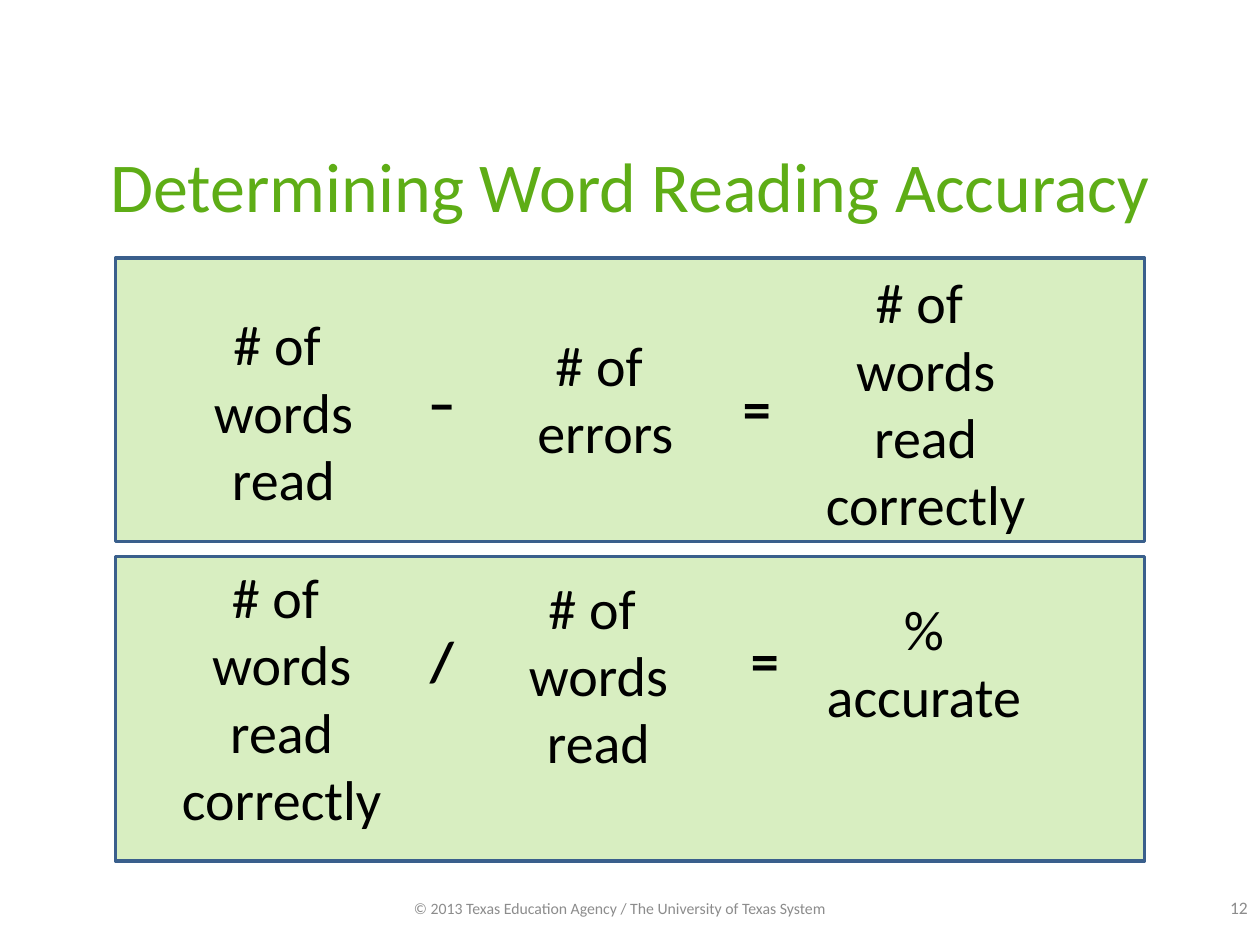
import pptx
import pptx.dml.color
import pptx.enum.shapes
import pptx.enum.text
import pptx.util
from lxml import etree
from pptx.oxml.ns import qn

Pt = pptx.util.Pt
COLORS = {"title": "5EAD16", "band": "92D050", "edge": "3A5F8C", "text": "000000", "footer": "8C8C8C"}
FONT = "Calibri"
TERM_SIZE = 32
LINE_HEIGHT = 39

SUBTRACTION = [
    (["# of ", "words", "read"], 42, 26, 108, False),
    (["–"], 155.5, 59, 62, True),
    (["# of ", "errors"], 222, 38, 116, False),
    (["="], 335.5, 62.5, 62, True),
    (["# of ", "words", "read", "correctly"], 378, 2, 170, False),
]
DIVISION = [
    (["# of ", "words", "read", "correctly"], 10, 0, 170, False),
    (["/"], 155.5, 36, 62, True),
    (["# of ", "words", "read"], 222, 6, 108, False),
    (["="], 340, 36, 62, True),
    (["%", "accurate"], 385, 18, 154, False),
]


def color(name):
    """Return a named colour."""
    return pptx.dml.color.RGBColor.from_string(COLORS[name])


def write_lines(frame, lines, size, shade, bold=False):
    """Fill a text frame with centred paragraphs."""
    frame.word_wrap = True
    for index, line in enumerate(lines):
        para = frame.paragraphs[0] if index == 0 else frame.add_paragraph()
        para.text = line
        para.alignment = pptx.enum.text.PP_ALIGN.CENTER
        para.font.name = FONT
        para.font.size = Pt(size)
        para.font.bold = bold
        para.font.color.rgb = color(shade)


def add_title(page, left, top, width, height):
    """Place the slide title."""
    title = page.shapes.title
    title.left, title.top, title.width, title.height = map(Pt, (left, top, width, height))
    title.text_frame.vertical_anchor = pptx.enum.text.MSO_ANCHOR.MIDDLE
    write_lines(title.text_frame, ["Determining Word Reading Accuracy"], 40, "title")


def add_equation(page, left, top, width, height, terms):
    """Draw a tinted band with the terms of one equation."""
    band = page.shapes.add_shape(
        pptx.enum.shapes.MSO_SHAPE.RECTANGLE, Pt(left), Pt(top), Pt(width), Pt(height))
    band.shadow.inherit = False
    band.fill.solid()
    band.fill.fore_color.rgb = color("band")
    tint = band.fill._xPr.find(qn("a:solidFill")).find(qn("a:srgbClr"))
    etree.SubElement(tint, qn("a:alpha"), val="35000")
    band.line.color.rgb = color("edge")
    band.line.width = Pt(2)
    for lines, across, down, term_width, bold in terms:
        box = page.shapes.add_textbox(
            Pt(left + across), Pt(top + down), Pt(term_width), Pt(len(lines) * LINE_HEIGHT + 7.2))
        write_lines(box.text_frame, lines, TERM_SIZE, "text", bold)


def add_footer_text(page, left, top, width, height, text, size):
    """Place one grey footer text."""
    box = page.shapes.add_textbox(Pt(left), Pt(top), Pt(width), Pt(height))
    box.text_frame.vertical_anchor = pptx.enum.text.MSO_ANCHOR.MIDDLE
    write_lines(box.text_frame, [text], size, "footer")


def main():
    """Build and save the deck."""
    deck = pptx.Presentation()
    deck.slide_width, deck.slide_height = Pt(720), Pt(540)
    page = deck.slides.add_slide(deck.slide_layouts[5])
    add_title(page, 36, 75, 648, 60.5)
    add_footer_text(page, 690, 509, 36, 19.5, "12", 10)
    add_equation(page, 66, 318, 588, 174, DIVISION)
    add_equation(page, 66, 147.5, 588, 162, SUBTRACTION)
    add_footer_text(page, 150, 510, 408, 18,
                    "© 2013 Texas Education Agency / The University of Texas System", 9)
    deck.save("out.pptx")


if __name__ == "__main__":
    main()
